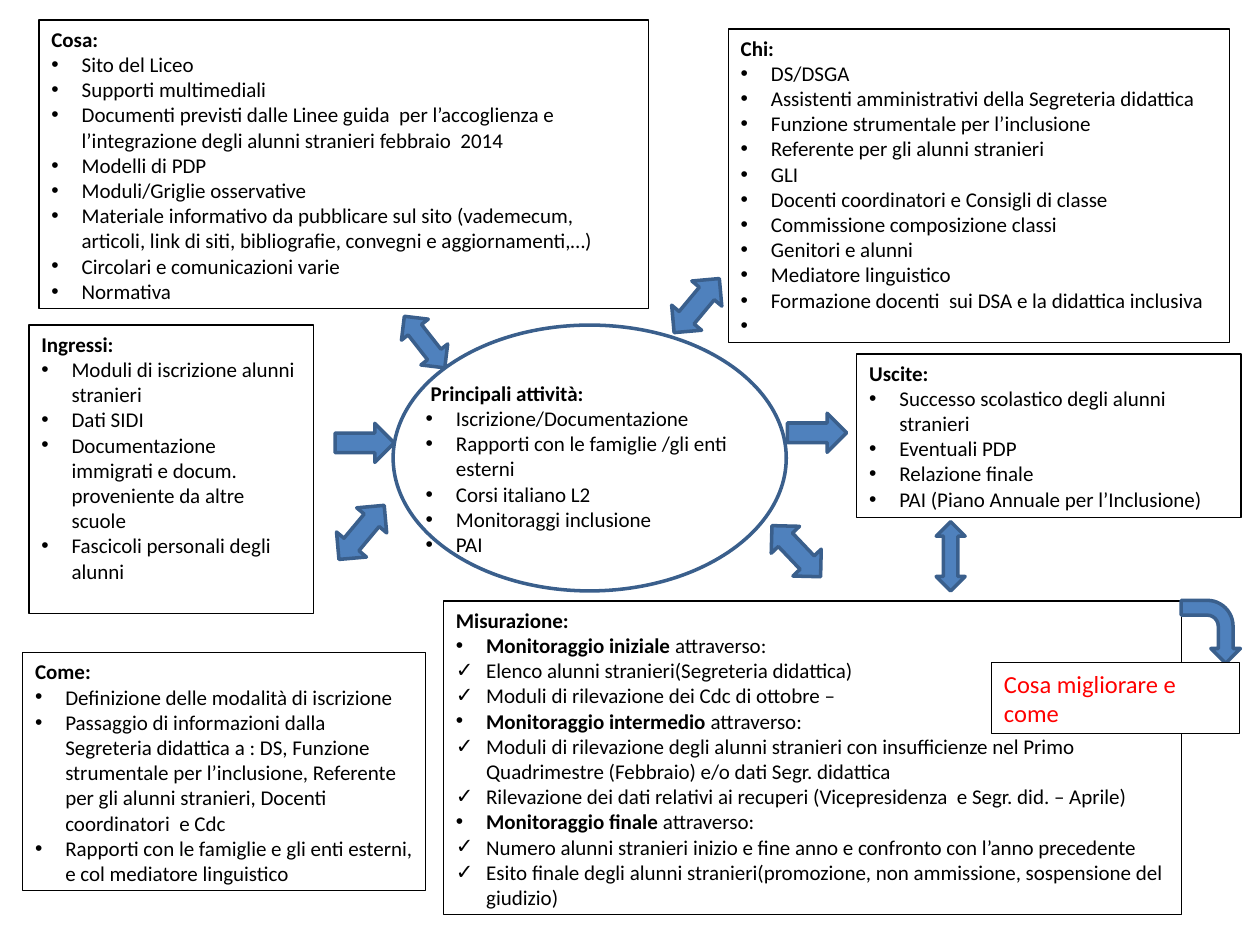
from dataclasses import dataclass

import pptx
from lxml import etree
from pptx.dml.color import RGBColor
from pptx.enum.shapes import MSO_SHAPE
from pptx.enum.text import MSO_ANCHOR, PP_ALIGN
from pptx.oxml.ns import qn
from pptx.util import Inches, Pt


@dataclass(frozen=True)
class Theme:
    font: str = "Calibri"
    bullet_font: str = "Arial"
    body: int = 12
    note: int = 14
    hairline: int = 0
    outline: int = 2
    ink: RGBColor = RGBColor(0, 0, 0)
    paper: RGBColor = RGBColor(255, 255, 255)
    alert: RGBColor = RGBColor(255, 0, 0)
    blue: RGBColor = RGBColor(0x4F, 0x81, 0xBD)
    dark_blue: RGBColor = RGBColor(0x3A, 0x5F, 0x8C)


THEME = Theme()
DOT, CHECK = "•", "✓"
INDENT = 0.24

COSA = [
    "Sito del Liceo",
    "Supporti multimediali",
    "Documenti previsti dalle Linee guida  per l’accoglienza e l’integrazione "
    "degli alunni stranieri febbraio  2014",
    "Modelli di PDP",
    "Moduli/Griglie osservative",
    "Materiale informativo da pubblicare sul sito (vademecum,  articoli, "
    "link di siti, bibliografie, convegni e aggiornamenti,…)",
    "Circolari e comunicazioni varie",
    "Normativa",
]
CHI = [
    "DS/DSGA",
    "Assistenti amministrativi della Segreteria didattica",
    "Funzione strumentale per l’inclusione",
    "Referente per gli alunni stranieri",
    "GLI",
    "Docenti coordinatori e Consigli di classe",
    "Commissione composizione classi",
    "Genitori e alunni",
    "Mediatore linguistico",
    "Formazione docenti  sui DSA e la didattica inclusiva",
    " ",
]
INGRESSI = [
    "Moduli di iscrizione alunni stranieri",
    "Dati SIDI",
    "Documentazione  immigrati e docum. proveniente da altre scuole",
    "Fascicoli personali degli alunni",
]
USCITE = [
    "Successo scolastico degli alunni stranieri",
    "Eventuali PDP",
    "Relazione finale",
    "PAI (Piano Annuale per l’Inclusione)",
]
COME = [
    "Definizione delle modalità di iscrizione",
    "Passaggio di informazioni dalla Segreteria didattica a : DS, Funzione "
    "strumentale per l’inclusione, Referente per gli alunni stranieri, "
    "Docenti coordinatori  e Cdc",
    "Rapporti con le famiglie e gli enti esterni, e col mediatore linguistico",
]
ATTIVITA = [
    "Iscrizione/Documentazione",
    "Rapporti con le famiglie /gli enti esterni",
    "Corsi italiano L2",
    "Monitoraggi inclusione",
    "PAI",
]
MONITORAGGI = {
    "iniziale": [
        "Elenco alunni stranieri(Segreteria didattica)",
        "Moduli di rilevazione dei Cdc di ottobre –",
    ],
    "intermedio": [
        "Moduli di rilevazione degli alunni stranieri con insufficienze nel Primo "
        "Quadrimestre (Febbraio) e/o dati Segr. didattica",
        "Rilevazione dei dati relativi ai recuperi (Vicepresidenza  e Segr. did. – Aprile)",
    ],
    "finale": [
        "Numero alunni stranieri inizio e fine anno e confronto con l’anno precedente",
        "Esito finale degli alunni stranieri(promozione, non ammissione, "
        "sospensione del giudizio)",
    ],
}

PANELS = [
    ("Cosa:", COSA, (0.31, 0.16, 4.84, 2.29)),
    ("Chi:", CHI, (5.78, 0.23, 3.98, 2.49)),
    ("Ingressi:", INGRESSI, (0.23, 2.58, 2.26, 2.29)),
    ("Uscite:", USCITE, (6.8, 2.81, 3.05, 1.3)),
    ("Come:", COME, (0.18, 5.18, 3.2, 1.89)),
]
RIGHT, DOUBLE = MSO_SHAPE.RIGHT_ARROW, MSO_SHAPE.LEFT_RIGHT_ARROW
ARROWS = [
    (RIGHT, (2.66, 3.36, 0.47, 0.31), 0),
    (RIGHT, (6.25, 3.28, 0.47, 0.31), 0),
    (DOUBLE, (2.59, 4.07, 0.56, 0.31), 309.9),
    (DOUBLE, (6.04, 4.22, 0.56, 0.31), 46.4),
    (DOUBLE, (7.27, 4.3, 0.55, 0.23), 90),
    (DOUBLE, (3.11, 2.58, 0.52, 0.27), 231.9),
    (DOUBLE, (5.25, 2.27, 0.56, 0.31), 309.9),
    (MSO_SHAPE.BENT_ARROW, (9.36, 4.78, 0.5, 0.47), 90),
]


def add_shape(slide, kind, box, fill=None, line=THEME.ink, width=THEME.hairline):
    shape = slide.shapes.add_shape(kind, *map(Inches, box))
    shape.shadow.inherit = False
    if fill is None:
        shape.fill.background()
    else:
        shape.fill.solid()
        shape.fill.fore_color.rgb = fill
    shape.line.color.rgb = line
    shape.line.width = Pt(width)
    return shape


def set_indent(paragraph, left, marker=None):
    """Indent a paragraph and, with a marker, hang it as a bullet."""
    properties = paragraph._p.get_or_add_pPr()
    properties.set("marL", str(Inches(left)))
    if marker:
        properties.set("indent", str(Inches(-left)))
        bullet_font = etree.SubElement(properties, qn("a:buFont"))
        bullet_font.set("typeface", THEME.bullet_font)
        etree.SubElement(properties, qn("a:buChar")).set("char", marker)


def add_text(paragraph, text, size=THEME.body, color=THEME.ink, bold=False):
    paragraph.alignment = PP_ALIGN.LEFT
    run = paragraph.add_run()
    run.text = text
    run.font.name = THEME.font
    run.font.size = Pt(size)
    run.font.bold = bold
    run.font.color.rgb = color


def add_bullet(frame, text, marker=DOT, lead=""):
    """Add a bulleted line, opened by an optional bold lead."""
    paragraph = frame.add_paragraph()
    set_indent(paragraph, INDENT, marker)
    if lead:
        add_text(paragraph, lead, bold=True)
    add_text(paragraph, text)


def start_frame(shape, heading, **text_format):
    """Set up the text frame of a shape and write its first line."""
    frame = shape.text_frame
    frame.word_wrap = True
    frame.vertical_anchor = MSO_ANCHOR.TOP
    add_text(frame.paragraphs[0], heading, **text_format)
    return frame


def add_panel(slide, heading, items, box):
    frame = start_frame(add_shape(slide, MSO_SHAPE.RECTANGLE, box), heading, bold=True)
    for item in items:
        add_bullet(frame, item)


def add_measurement_panel(slide):
    panel = add_shape(slide, MSO_SHAPE.RECTANGLE, (3.52, 4.77, 5.86, 2.49))
    frame = start_frame(panel, "Misurazione:", bold=True)
    for stage, checks in MONITORAGGI.items():
        add_bullet(frame, "attraverso:", lead=f"Monitoraggio {stage} ")
        for check in checks:
            add_bullet(frame, check, CHECK)


def add_activities(slide):
    text_box = slide.shapes.add_textbox(*map(Inches, (3.28, 2.97, 3.05, 1.5)))
    frame = start_frame(text_box, "Principali attività:", bold=True)
    set_indent(frame.paragraphs[0], 0.04)
    for activity in ATTIVITA:
        add_bullet(frame, activity)


def add_arrow(slide, kind, box, rotation):
    arrow = add_shape(slide, kind, box, THEME.blue, THEME.dark_blue, THEME.outline)
    arrow.rotation = rotation


def add_note(slide):
    note = add_shape(slide, MSO_SHAPE.RECTANGLE, (7.87, 5.26, 1.97, 0.56), THEME.paper)
    start_frame(note, "Cosa migliorare e come", size=THEME.note, color=THEME.alert)


def main():
    presentation = pptx.Presentation()
    presentation.slide_width, presentation.slide_height = Inches(10), Inches(7.5)
    slide = presentation.slides.add_slide(presentation.slide_layouts[6])
    add_measurement_panel(slide)
    add_shape(slide, MSO_SHAPE.OVAL, (3.12, 2.58, 3.12, 2.11),
              line=THEME.dark_blue, width=THEME.outline)
    for panel in PANELS:
        add_panel(slide, *panel)
    add_activities(slide)
    for arrow in ARROWS:
        add_arrow(slide, *arrow)
    add_note(slide)
    presentation.save("out.pptx")


if __name__ == "__main__":
    main()
